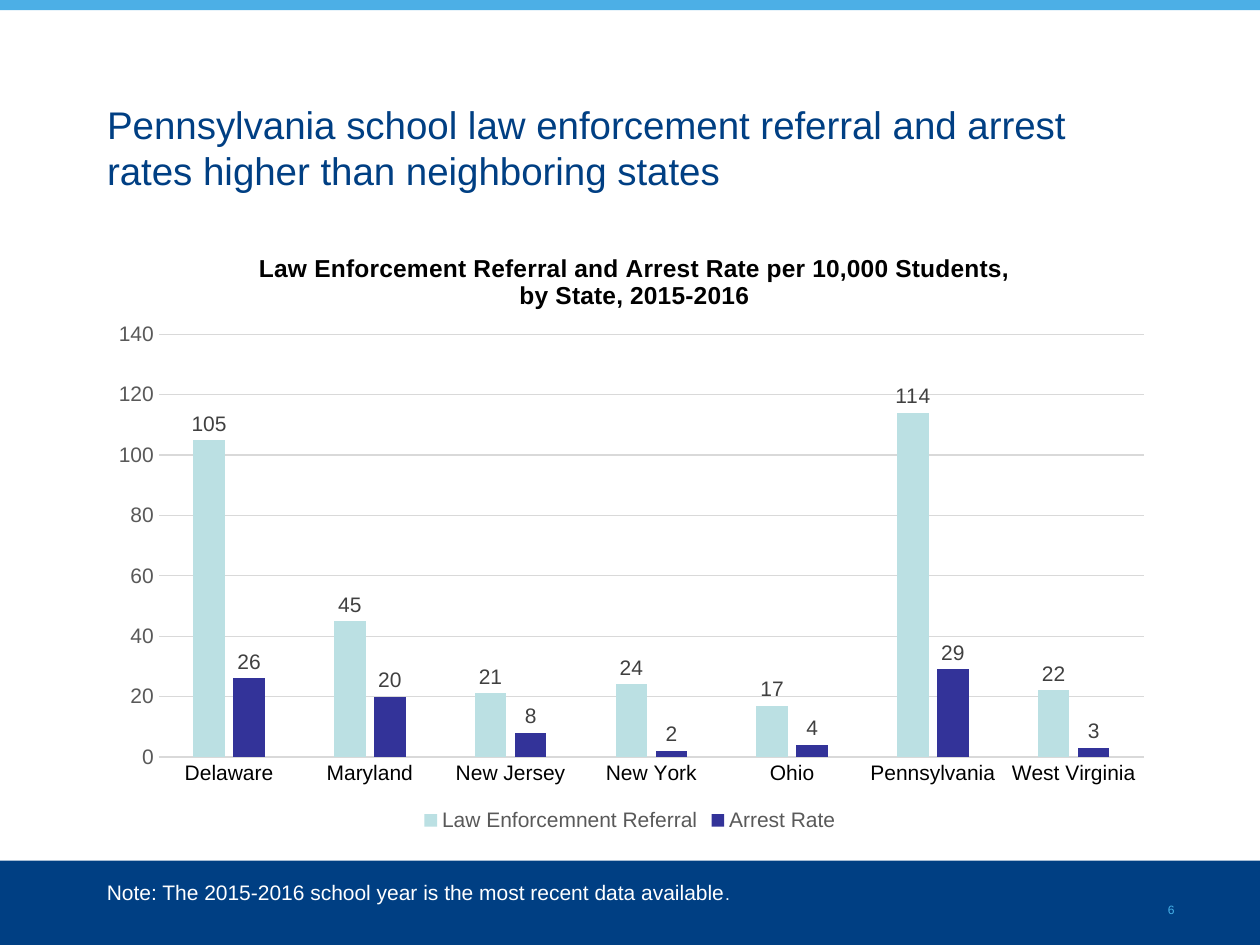
from lxml.etree import SubElement
from pptx import Presentation
from pptx.chart.data import CategoryChartData
from pptx.dml.color import RGBColor
from pptx.enum.chart import (XL_CHART_TYPE, XL_LABEL_POSITION,
                             XL_LEGEND_POSITION, XL_TICK_MARK)
from pptx.enum.shapes import MSO_SHAPE
from pptx.enum.text import MSO_ANCHOR, PP_ALIGN
from pptx.oxml.ns import qn
from pptx.util import Inches, Pt

TITLE = ("Pennsylvania school law enforcement referral and arrest "
         "rates higher than neighboring states")
NOTE = [("Note: The 2015-2016 school year is the most recent data available", 12),
        (".", 10)]
PAGE = "6"
BANDS = [((0, 6.83, 10, 0.67), "003F83"), ((0, 0, 10, 0.08), "4CAFE6")]
CHART_TITLE = ["Law Enforcement Referral and Arrest Rate per 10,000 Students,",
               "by State, 2015-2016"]
STATES = ["Delaware", "Maryland", "New Jersey", "New York", "Ohio",
          "Pennsylvania", "West Virginia"]
SERIES = [("Law Enforcemnent Referral", [105, 45, 21, 24, 17, 114, 22], "BBE0E3"),
          ("Arrest Rate", [26, 20, 8, 2, 4, 29, 3], "333399")]
TITLE_LAYOUT = {"xMode": "edge", "yMode": "edge", "x": 0.15, "y": 0.04}
PLOT_LAYOUT = {"layoutTarget": "inner", "xMode": "edge", "yMode": "edge",
               "x": 0.06, "y": 0.18, "w": 0.92, "h": 0.69}


def box(left, top, width, height):
    """Return a position and size in inches."""
    return Inches(left), Inches(top), Inches(width), Inches(height)


def paint(fmt, color):
    """Give a fill a solid colour."""
    fmt.solid()
    fmt.fore_color.rgb = RGBColor.from_string(color)


def style(font, size, color, bold=False):
    """Set face, size, colour and weight of a font."""
    font.name, font.size, font.bold = "Arial", Pt(size), bold
    paint(font.fill, color)


def rule(line, color="D9D9D9"):
    """Make a thin chart line."""
    paint(line.fill, color)
    line.width = Pt(0.75)


def place(parent, values):
    """Give a chart part a manual layout."""
    layout = parent.find(qn("c:layout"))
    if layout is None:
        layout = SubElement(parent, qn("c:layout"))
        before = parent.find(qn("c:tx"))
        if before is not None:
            before.addnext(layout)
        else:
            parent.insert(0, layout)
    manual = SubElement(layout, qn("c:manualLayout"))
    for name, value in values.items():
        SubElement(manual, qn(f"c:{name}")).set("val", str(value))


def add_rates(s):
    """Add the clustered column chart of rates by state."""
    data = CategoryChartData(number_format="0")
    data.categories = STATES
    for name, values, _ in SERIES:
        data.add_series(name, values)
    chart = s.shapes.add_chart(XL_CHART_TYPE.COLUMN_CLUSTERED,
                               *box(0.75, 1.78, 8.5, 4.86), data).chart
    style(chart.font, 12, "000000")

    tf = chart.chart_title.text_frame
    tf.text = "\n".join(CHART_TITLE)
    for p in tf.paragraphs:
        p.alignment = PP_ALIGN.CENTER
        style(p.runs[0].font, 14, "000000", True)
    chart.chart_title.include_in_layout = False
    place(tf._txBody.getparent().getparent(), TITLE_LAYOUT)

    chart.has_legend = True
    chart.legend.position = XL_LEGEND_POSITION.BOTTOM
    chart.legend.include_in_layout = False
    style(chart.legend.font, 12, "595959")

    cat, val = chart.category_axis, chart.value_axis
    for axis, color in ((cat, "000000"), (val, "595959")):
        axis.major_tick_mark = axis.minor_tick_mark = XL_TICK_MARK.NONE
        style(axis.tick_labels.font, 12, color)
    rule(cat.format.line)
    val.format.line.fill.background()
    rule(val.major_gridlines.format.line)
    val.minimum_scale, val.maximum_scale, val.major_unit = 0, 140, 20

    plot = chart.plots[0]
    plot.vary_by_categories = False
    plot.gap_width, plot.overlap = 219, -27
    place(chart._chartSpace.chart.plotArea, PLOT_LAYOUT)
    for series, (_, _, color) in zip(plot.series, SERIES):
        paint(series.format.fill, color)
        labels = series.data_labels
        labels.show_value = True
        labels.position = XL_LABEL_POSITION.OUTSIDE_END
        labels.number_format, labels.number_format_is_linked = "0", False
        style(labels.font, 12, "404040")


def main():
    """Build the slide."""
    prs = Presentation()
    prs.slide_width, prs.slide_height = Inches(10), Inches(7.5)
    s = prs.slides.add_slide(prs.slide_layouts[5])

    for place_at, color in BANDS:
        band = s.shapes.add_shape(MSO_SHAPE.RECTANGLE, *box(*place_at))
        band.shadow.inherit = False
        paint(band.fill, color)
        band.line.fill.background()

    title = s.shapes.title
    title.left, title.top, title.width, title.height = box(0.75, 0.75, 8.5, 0.58)
    tf = title.text_frame
    tf.text = TITLE
    tf.vertical_anchor = MSO_ANCHOR.TOP
    tf.paragraphs[0].alignment = PP_ALIGN.LEFT
    style(tf.paragraphs[0].runs[0].font, 22, "003F83")

    add_rates(s)

    tf = s.shapes.add_textbox(*box(0.75, 6.93, 8.5, 0.3)).text_frame
    tf.word_wrap = True
    for text, size in NOTE:
        r = tf.paragraphs[0].add_run()
        r.text = text
        style(r.font, size, "FFFFFF")

    tf = s.shapes.add_textbox(*box(9.17, 7, 0.34, 0.23)).text_frame
    tf.text = PAGE
    r = tf.paragraphs[0].runs[0]
    style(r.font, 12, "46B0E7")
    r.font._element.set("baseline", "-25000")

    prs.save("out.pptx")


if __name__ == "__main__":
    main()
